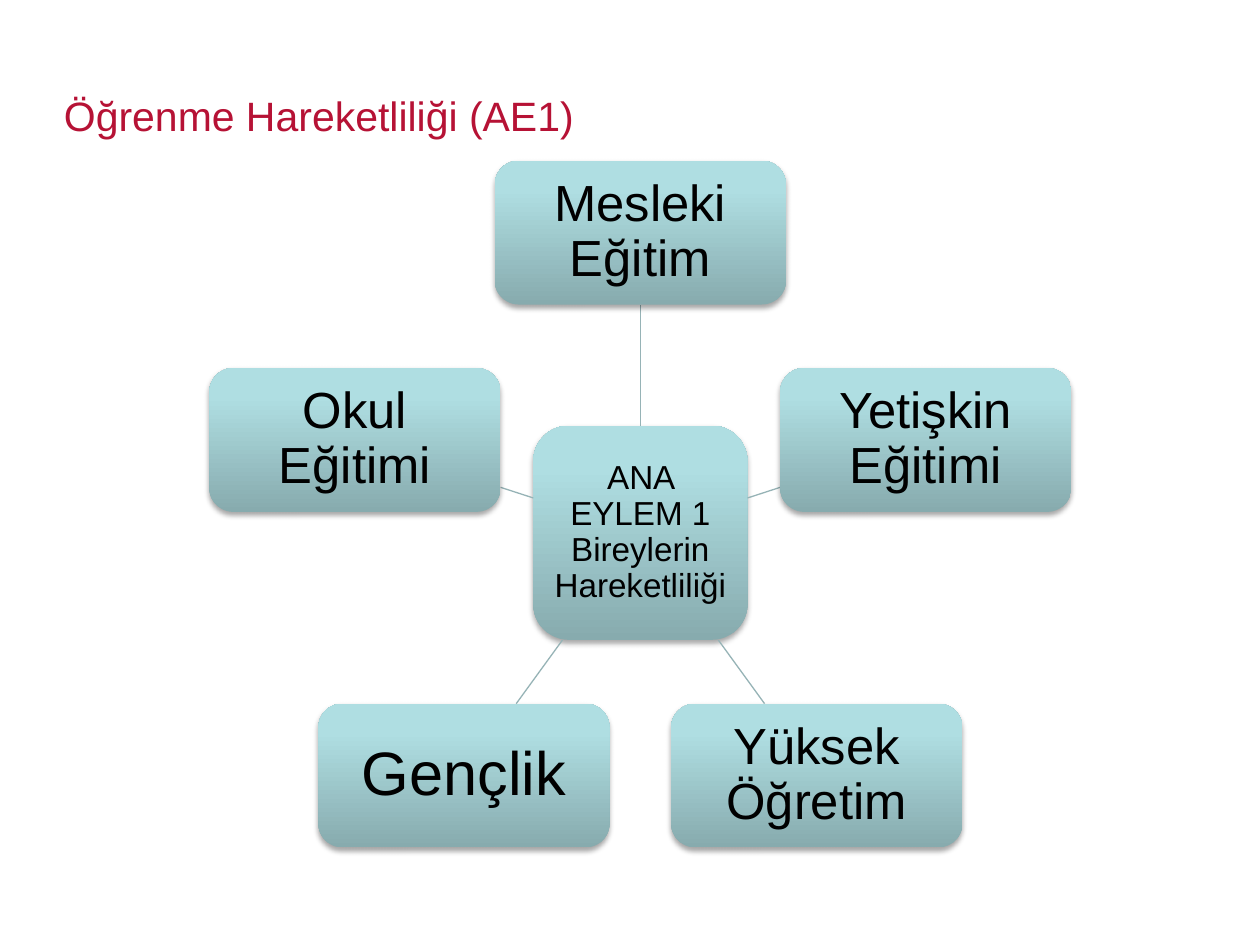
from copy import deepcopy
from math import cos, radians, sin

from lxml import etree
from pptx import Presentation
from pptx.dml.color import RGBColor
from pptx.enum.shapes import MSO_CONNECTOR, MSO_SHAPE
from pptx.enum.text import MSO_ANCHOR, PP_ALIGN
from pptx.oxml import parse_xml
from pptx.oxml.ns import qn
from pptx.util import Cm, Pt

ROUNDED = MSO_SHAPE.ROUNDED_RECTANGLE
STRAIGHT = MSO_CONNECTOR.STRAIGHT
MIDDLE = MSO_ANCHOR.MIDDLE
CENTER = PP_ALIGN.CENTER

CRIMSON = RGBColor(0xB6, 0x12, 0x35)
BLACK = RGBColor(0x00, 0x00, 0x00)
SPOKE_GREY = RGBColor(0x96, 0xB3, 0xB6)
TEAL_STOPS = (
    (0, RGBColor(0x87, 0xAB, 0xAE)),
    (0.8, RGBColor(0xAF, 0xDE, 0xE2)),
    (1, RGBColor(0xAF, 0xE0, 0xE4)),
)

SHADOW = (
    '<a:outerShdw xmlns:a="http://schemas.openxmlformats.org/drawingml/2006/main"'
    f' blurRad="{Pt(3.1)}" dist="{Pt(1.8)}" dir="5400000" rotWithShape="0">'
    '<a:srgbClr val="000000"><a:alpha val="35000"/></a:srgbClr></a:outerShdw>'
)

HUB_X, HUB_Y, HUB_SIDE = 12.91, 10.74, 4.32
RADIUS = 6.05
FIELD_WIDTH, FIELD_HEIGHT = 5.87, 2.9
FIELDS = (
    ("Mesleki Eğitim", 29),
    ("Yetişkin Eğitimi", 29),
    ("Yüksek Öğretim", 29),
    ("Gençlik", 35),
    ("Okul Eğitimi", 29),
)


class DiagramSlide:
    font_name = "Arial"

    def __init__(self, slide):
        self.slide = slide

    def set_text(self, frame, text, size, color):
        frame.word_wrap = True
        paragraph = frame.paragraphs[0]
        paragraph.text = text
        font = paragraph.runs[0].font
        font.name, font.size, font.color.rgb = self.font_name, Pt(size), color
        return paragraph

    def title(self, text, left, top, width, height):
        heading = self.slide.shapes.add_textbox(Cm(left), Cm(top), Cm(width), Cm(height))
        self.set_text(heading.text_frame, text, 23.4, CRIMSON)

    def paint(self, box):
        box.fill.gradient()
        box.fill.gradient_angle = 90
        stops = box._element.spPr.find(qn("a:gradFill")).find(qn("a:gsLst"))
        stops.append(deepcopy(stops[-1]))
        for stop, (position, color) in zip(box.fill.gradient_stops, TEAL_STOPS):
            stop.position = position
            stop.color.rgb = color
        box.line.fill.background()
        box.shadow.inherit = False
        box._element.spPr.find(qn("a:effectLst")).append(parse_xml(SHADOW))

    def node(self, text, x, y, width, height, size, inset):
        box = self.slide.shapes.add_shape(
            ROUNDED, Cm(x - width / 2), Cm(y - height / 2), Cm(width), Cm(height)
        )
        self.paint(box)
        frame = box.text_frame
        frame.margin_left = frame.margin_right = Cm(inset)
        frame.margin_top = frame.margin_bottom = Cm(inset)
        frame.vertical_anchor = MIDDLE
        label = self.set_text(frame, text, size, BLACK)
        label.alignment = CENTER
        label.line_spacing = 0.9

    def spoke(self, start, end):
        line = self.slide.shapes.add_connector(STRAIGHT, *map(Cm, start + end))
        line.line.color.rgb = SPOKE_GREY
        line.line.width = Pt(0.75)
        etree.SubElement(line._element.spPr, qn("a:effectLst"))


def edge_distance(dx, dy, width, height):
    return min(
        half / abs(part)
        for half, part in ((width / 2, dx), (height / 2, dy))
        if abs(part) > 0.001
    )


def main():
    presentation = Presentation()
    presentation.slide_width, presentation.slide_height = Cm(25.4), Cm(19.05)
    diagram = DiagramSlide(presentation.slides.add_slide(presentation.slide_layouts[6]))

    diagram.node(
        "ANA EYLEM 1 Bireylerin Hareketliliği",
        HUB_X, HUB_Y, HUB_SIDE, HUB_SIDE, 19, 0.13,
    )
    for index, (field, size) in enumerate(FIELDS):
        angle = radians(index * 360 / len(FIELDS))
        dx, dy = sin(angle), -cos(angle)
        inner = edge_distance(dx, dy, HUB_SIDE, HUB_SIDE)
        outer = RADIUS - edge_distance(dx, dy, FIELD_WIDTH, FIELD_HEIGHT)
        start, end = ((HUB_X + dx * reach, HUB_Y + dy * reach) for reach in (inner, outer))
        diagram.spoke(start, end)
        diagram.node(
            field, HUB_X + dx * RADIUS, HUB_Y + dy * RADIUS,
            FIELD_WIDTH, FIELD_HEIGHT, size, 0.2,
        )

    diagram.title("Öğrenme Hareketliliği (AE1)", 1.04, 1.7, 23.32, 1.7)
    presentation.save("out.pptx")


if __name__ == "__main__":
    main()
